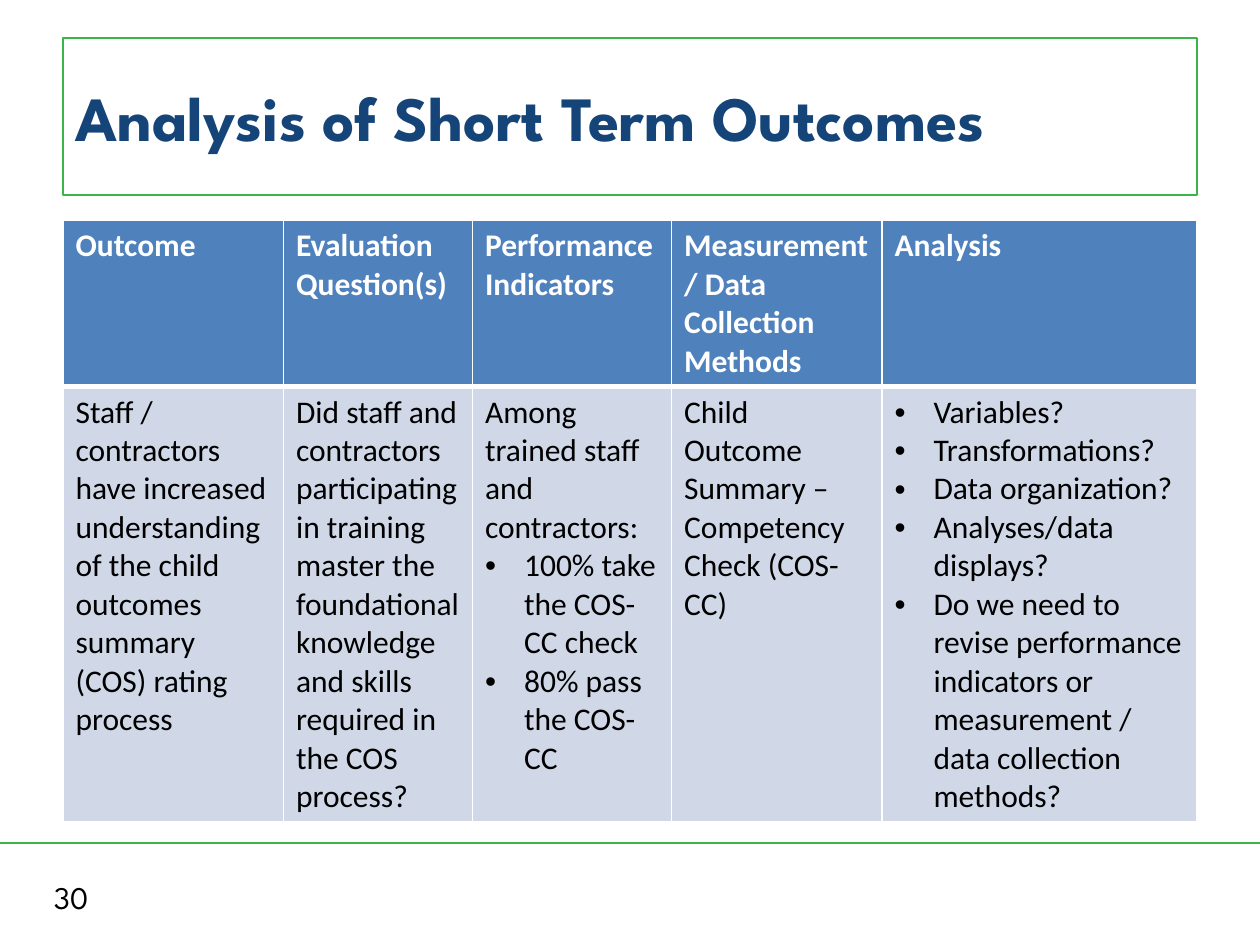
from lxml import etree
from pptx import Presentation
from pptx.dml.color import RGBColor
from pptx.enum.shapes import MSO_CONNECTOR, MSO_SHAPE
from pptx.enum.text import MSO_ANCHOR, PP_ALIGN
from pptx.oxml.ns import qn
from pptx.util import Inches, Pt

STRAIGHT = MSO_CONNECTOR.STRAIGHT
RECTANGLE = MSO_SHAPE.RECTANGLE
MIDDLE = MSO_ANCHOR.MIDDLE
LEFT = PP_ALIGN.LEFT

COLORS = {
    "green": "39B54A", "navy": "154578", "black": "000000",
    "white": "FFFFFF", "header": "4F81BD", "body": "D0D8E8",
}
FORMATS = {
    "title": {"name": "League Spartan", "size": Pt(36), "bold": True, "color": "navy"},
    "number": {"name": "League Spartan", "size": Pt(18), "bold": False, "color": "black"},
    "header": {"name": "Calibri", "size": Pt(18), "bold": True, "color": "white"},
    "body": {"name": "Calibri", "size": Pt(18), "bold": False, "color": "black"},
}
COLUMN_WIDTHS = [1.75, 1.5, 1.58, 1.67, 2.5]
ROW_HEIGHTS = [1.32, 3.45]
BULLET = "• "
HEADERS = [
    "Outcome", "Evaluation Question(s)", "Performance Indicators",
    "Measurement / Data Collection Methods", "Analysis",
]
# Lines that start with BULLET become bulleted paragraphs.
DETAILS = [
    "Staff / contractors have increased understanding of the child outcomes "
    "summary (COS) rating process",
    "Did staff and contractors participating in training master the foundational "
    "knowledge and skills required in the COS process?",
    "Among trained staff and contractors:\n"
    "• 100% take the COS-CC check\n"
    "• 80% pass the COS-CC",
    "Child Outcome Summary – Competency Check (COS-CC)",
    "• Variables?\n"
    "• Transformations?\n"
    "• Data organization?\n"
    "• Analyses/data displays?\n"
    "• Do we need to revise performance indicators or measurement / "
    "data collection methods?",
]


def rgb(color):
    return RGBColor.from_string(COLORS[color])


def add_bullet(para):
    properties = para._p.get_or_add_pPr()
    properties.set("marL", str(Inches(0.31)))
    properties.set("indent", str(-Inches(0.31)))
    etree.SubElement(properties, qn("a:buFont"), typeface="Arial")
    etree.SubElement(properties, qn("a:buChar"), char=BULLET.strip())


def write_text(frame, text, style):
    frame.word_wrap = True
    for index, line in enumerate(text.split("\n")):
        para = frame.paragraphs[0] if index == 0 else frame.add_paragraph()
        para.alignment = LEFT
        if line.startswith(BULLET):
            add_bullet(para)
        span = para.add_run()
        span.text = line.removeprefix(BULLET)
        for name, value in FORMATS[style].items():
            if name == "color":
                span.font.color.rgb = rgb(value)
            else:
                setattr(span.font, name, value)


def add_rule(page, top):
    rule = page.shapes.add_connector(STRAIGHT, 0, Inches(top), Inches(10), Inches(top))
    rule.line.color.rgb = rgb("green")
    rule.line.width = Pt(1.5)
    etree.SubElement(rule._element.spPr, qn("a:effectLst"))


def add_title(page, text):
    box = page.shapes.add_shape(RECTANGLE, Inches(0.5), Inches(0.3), Inches(9), Inches(1.25))
    box.shadow.inherit = False
    box.fill.background()
    box.line.color.rgb = rgb("green")
    box.line.width = Pt(1)
    box.text_frame.vertical_anchor = MIDDLE
    write_text(box.text_frame, text, "title")


def add_page_number(page, text):
    box = page.shapes.add_textbox(Inches(0.33), Inches(6.92), Inches(2.33), Inches(0.4))
    box.text_frame.vertical_anchor = MIDDLE
    write_text(box.text_frame, text, "number")


def add_borders(cell, widths):
    """Draw white cell borders; widths maps each side to points."""
    properties = cell._tc.get_or_add_tcPr()
    for side, width in widths.items():
        border = etree.SubElement(properties, qn(f"a:ln{side}"), w=str(Pt(width)))
        fill = etree.SubElement(border, qn("a:solidFill"))
        etree.SubElement(fill, qn("a:srgbClr"), val=COLORS["white"])


def add_outcome_table(page):
    rows = [("header", HEADERS, {"L": 1, "R": 1, "T": 1, "B": 3}),
            ("body", DETAILS, {"L": 1, "R": 1, "T": 3, "B": 1})]
    frame = page.shapes.add_table(len(rows), len(COLUMN_WIDTHS), Inches(0.5), Inches(1.75),
                                  Inches(sum(COLUMN_WIDTHS)), Inches(sum(ROW_HEIGHTS)))
    table = frame.table
    for column, width in zip(table.columns, COLUMN_WIDTHS):
        column.width = Inches(width)
    for row, height, (style, texts, widths) in zip(table.rows, ROW_HEIGHTS, rows):
        row.height = Inches(height)
        for cell, text in zip(row.cells, texts):
            add_borders(cell, widths)
            cell.fill.solid()
            cell.fill.fore_color.rgb = rgb(style)
            write_text(cell.text_frame, text, style)


def main():
    deck = Presentation()
    deck.slide_width = Inches(10)
    deck.slide_height = Inches(7.5)
    page = deck.slides.add_slide(deck.slide_layouts[6])
    add_rule(page, 6.69)
    add_page_number(page, "30")
    add_title(page, "Analysis of Short Term Outcomes")
    add_outcome_table(page)
    deck.save("out.pptx")


if __name__ == "__main__":
    main()
